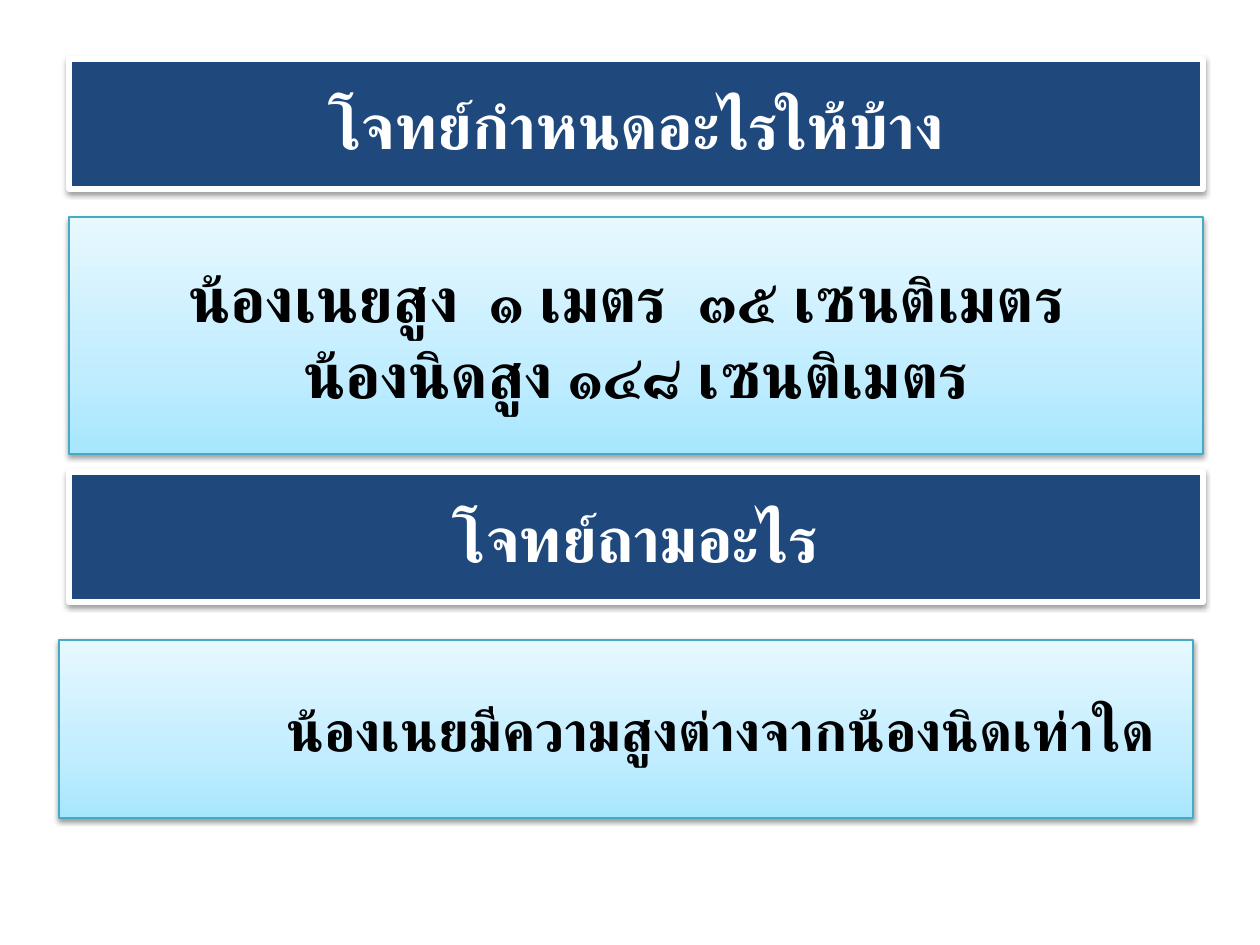
"""Build a slide with two headed boxes that analyse a Thai word problem."""
import copy

import pptx
import pptx.dml.color
import pptx.enum.shapes
import pptx.enum.text
import pptx.oxml
import pptx.oxml.ns
import pptx.util

RGB = pptx.dml.color.RGBColor
NAVY = RGB(0x1F, 0x49, 0x7D)
WHITE = RGB(0xFF, 0xFF, 0xFF)
BLACK = RGB(0x00, 0x00, 0x00)
TEAL = RGB(0x46, 0xAA, 0xC5)
STOPS = [
    (0, RGB(0xA7, 0xE6, 0xFF)),
    (0.35, RGB(0xC1, 0xED, 0xFF)),
    (1, RGB(0xE7, 0xF8, 0xFF)),
]
PX = 914400 / 126
SHADOW = (
    f'<a:outerShdw {pptx.oxml.ns.nsdecls("a")} blurRad="39370" dist="20320" '
    'dir="5400000" rotWithShape="0"><a:srgbClr val="000000">'
    '<a:alpha val="38000"/></a:srgbClr></a:outerShdw>'
)


def add_text(p, text, size=36, color=BLACK, font="Roboto", bold=True):
    p.alignment = pptx.enum.text.PP_ALIGN.CENTER
    r = p.add_run()
    r.text = text
    r.font.size = pptx.util.Pt(size)
    r.font.name = font
    r.font.bold = bold
    r.font.color.rgb = color
    cs = pptx.oxml.parse_xml(f'<a:cs {pptx.oxml.ns.nsdecls("a")} typeface="{font}"/>')
    r.font._element.append(cs)


prs = pptx.Presentation()
prs.slide_width = pptx.util.Inches(10)
prs.slide_height = pptx.util.Inches(7.5)
s = prs.slides.add_slide(prs.slide_layouts[5])

boxes = []
for x, y, h, is_heading in [
    (69, 59, 130, True),
    (69, 217, 237, False),
    (69, 472, 130, True),
    (59, 640, 178, False),
]:
    place = [round(v * PX) for v in (x, y, 1134, h)]
    if not boxes:
        sp = s.shapes.title
        sp.left, sp.top, sp.width, sp.height = place
    else:
        sp = s.shapes.add_shape(pptx.enum.shapes.MSO_SHAPE.RECTANGLE, *place)
    sp.shadow.inherit = False
    if is_heading:
        sp.fill.solid()
        sp.fill.fore_color.rgb = NAVY
    else:
        sp.fill.gradient()
        sp.fill.gradient_angle = 90
        first = sp.fill.gradient_stops[0]._gs
        first.addnext(copy.deepcopy(first))
        for stop, (position, color) in zip(sp.fill.gradient_stops, STOPS):
            stop.position = position
            stop.color.rgb = color
    sp.line.color.rgb = WHITE if is_heading else TEAL
    sp.line.width = pptx.util.Pt(3 if is_heading else 0.75)
    effects = sp._element.spPr.find(pptx.oxml.ns.qn("a:effectLst"))
    effects.append(pptx.oxml.parse_xml(SHADOW))
    tf = sp.text_frame
    tf.word_wrap = True
    tf.auto_size = pptx.enum.text.MSO_AUTO_SIZE.NONE
    tf.vertical_anchor = pptx.enum.text.MSO_ANCHOR.MIDDLE
    boxes.append(tf)

given_heading, given, asked_heading, asked = boxes
add_text(given_heading.paragraphs[0], "โจทย์กำหนดอะไรให้บ้าง", color=WHITE)

p = given.paragraphs[0]
add_text(p, " ", size=32, font="Calibri", bold=False)
add_text(p, "น้องเนยสูง  ๑ เมตร  ๓๕ เซนติเมตร  ")
add_text(given.add_paragraph(), "น้องนิดสูง ๑๔๘ เซนติเมตร")

add_text(asked_heading.paragraphs[0], "โจทย์ถามอะไร", color=WHITE)

p = asked.paragraphs[0]
p.level = 3
add_text(p, "น้องเนยมีความสูงต่างจากน้องนิดเท่าใด", size=32)
pPr = p._p.get_or_add_pPr()
pPr.set("marL", str(pptx.util.Inches(1.5)))
pPr.set("indent", "0")

prs.save("out.pptx")
